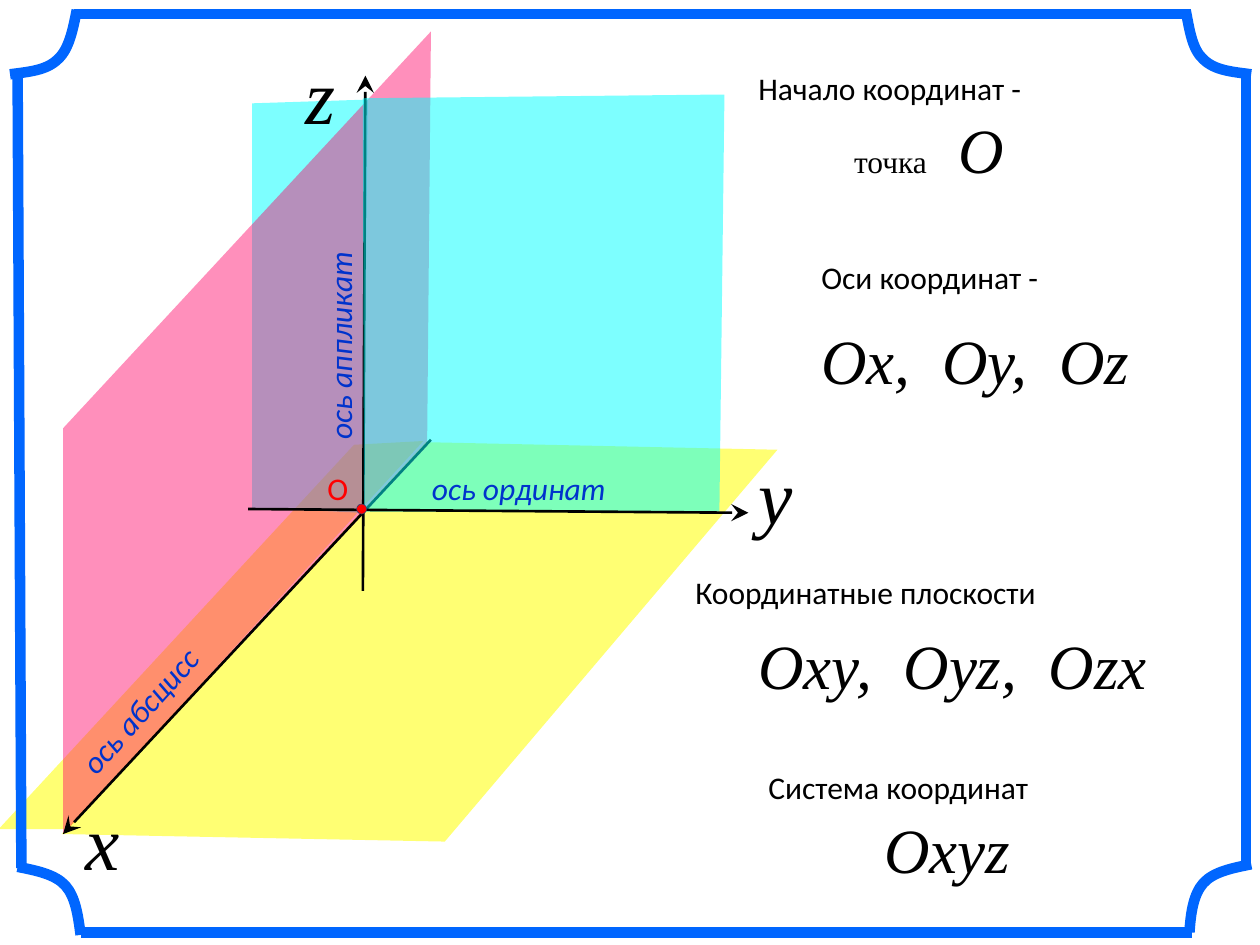
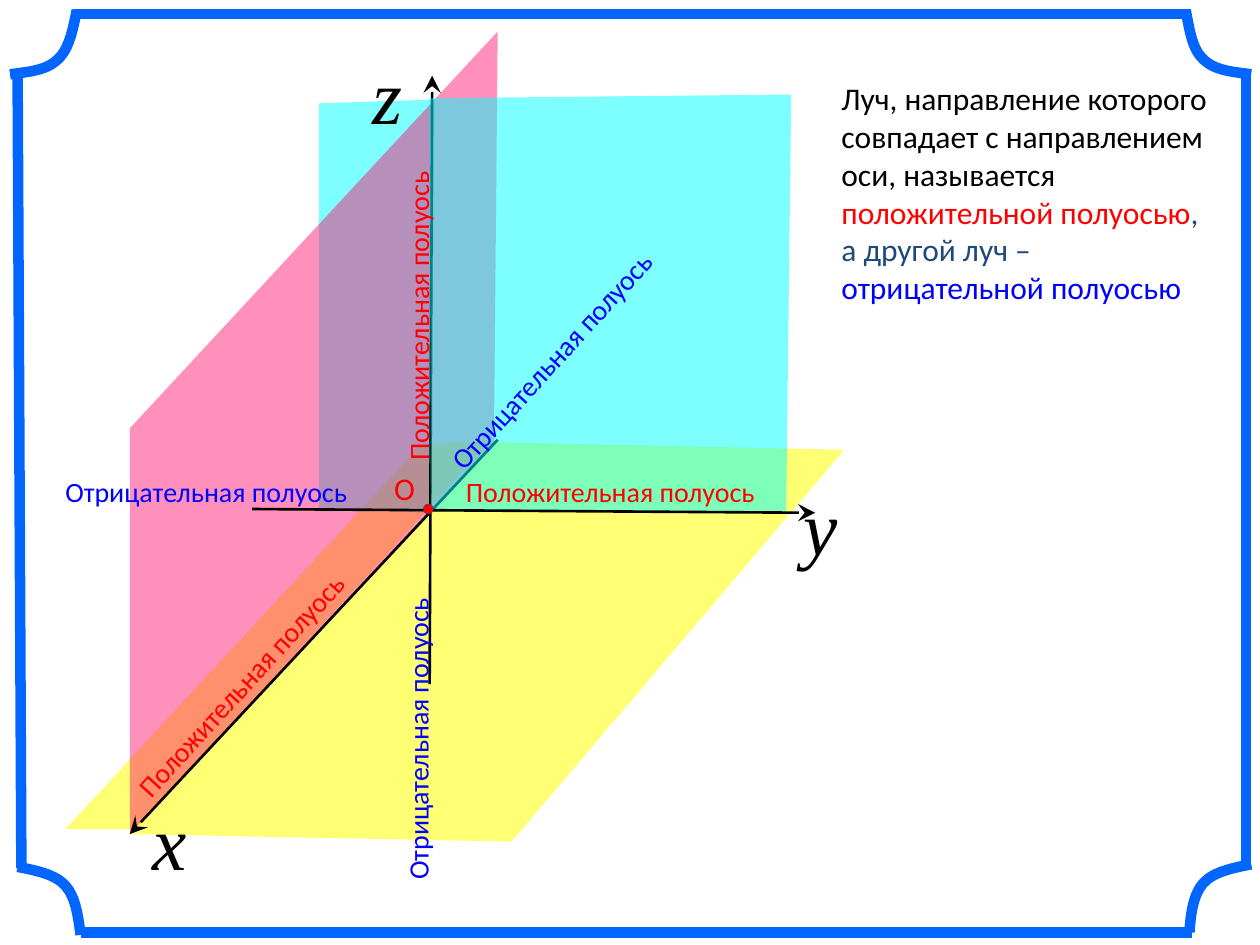
from dataclasses import dataclass

from lxml import etree
from pptx import Presentation
from pptx import util as u
from pptx.dml import color
from pptx.enum import shapes, text
from pptx.oxml import ns

COLORS = {
    "frame": "0066FF", "floor": "FFFF00", "wall": "00FFFF", "side": "FF0066",
    "ink": "000000", "axis_name": "0033CC", "positive": "FF0000",
    "negative": "0000FF", "navy": "1F497D",
}
SANS, SERIF = "Calibri", "Times New Roman"
POSITIVE, NEGATIVE = "Положительная полуось", "Отрицательная полуось"
Point = tuple[float, float]


@dataclass(frozen=True)
class Run:
    text: str
    size: int = 18
    color: str = "ink"
    font: str = SANS
    italic: bool = False
    spacing: int = 0  # hundredths of a point


@dataclass(frozen=True)
class Label:
    left: float
    top: float
    width: float
    height: float
    paragraphs: tuple[tuple[Run, ...], ...]
    rotation: float = 0
    wrap: bool = False


@dataclass(frozen=True)
class Plane:
    color: str
    opacity: int
    points: tuple[Point, ...]


@dataclass(frozen=True)
class Line:
    start: Point
    end: Point


# Coordinate planes, placed for the first slide
BACK_PLANES = (
    Plane("floor", 55, ((-0.01, 6.58), (0.54, 6.58), (3.36, 3.5), (2.81, 3.53))),
    Plane("wall", 51, ((2, 4.03), (2.88, 4.07), (2.92, 0.79), (2, 0.82))),
    Plane("floor", 55, ((0.49, 6.62), (3.53, 6.68), (6.17, 3.57), (3.38, 3.51))),
)
SIDE_PLANE = Plane("side", 44, ((0.5, 6.62), (3.39, 3.54), (3.42, 0.25), (0.5, 3.4)))
FRONT_PLANE = Plane("wall", 51, ((2.89, 4.06), (5.71, 4.06), (5.75, 0.75), (2.88, 0.78)))

# Frame: four sides and four curved corners
FRAME_SIDES = (
    Line((0.59, 0.11), (9.45, 0.11)), Line((0.64, 7.4), (9.46, 7.4)),
    Line((9.89, 0.59), (9.89, 6.89)), Line((0.14, 0.59), (0.17, 6.89)),
)
FRAME_CORNERS = (
    ((0.14, 6.88), (0.29, 6.91), (0.44, 6.94), (0.52, 7.03),
     (0.6, 7.12), (0.62, 7.27), (0.64, 7.42)),
    ((9.93, 6.86), (9.78, 6.89), (9.63, 6.92), (9.55, 7.01),
     (9.47, 7.1), (9.45, 7.25), (9.44, 7.4)),
    ((9.41, 0.08), (9.44, 0.23), (9.46, 0.39), (9.55, 0.47),
     (9.64, 0.56), (9.78, 0.57), (9.93, 0.59)),
    ((0.61, 0.08), (0.58, 0.23), (0.55, 0.39), (0.46, 0.47),
     (0.37, 0.56), (0.23, 0.57), (0.08, 0.59)),
)


def rgb(name: str) -> color.RGBColor:
    return color.RGBColor.from_string(COLORS[name])


def add_outline(slide, points: tuple[Point, ...], close: bool):
    emu = [(u.Inches(x), u.Inches(y)) for x, y in points]
    builder = slide.shapes.build_freeform(*emu[0])
    builder.add_line_segments(emu[1:], close=close)
    sp = builder.convert_to_shape()
    sp.shadow.inherit = False
    return sp


def add_plane(slide, plane: Plane, dx: float) -> None:
    sp = add_outline(slide, tuple((x + dx, y) for x, y in plane.points), True)
    sp.fill.solid()
    sp.fill.fore_color.rgb = rgb(plane.color)
    fill_color = sp.element.spPr.find(".//" + ns.qn("a:srgbClr"))
    etree.SubElement(fill_color, ns.qn("a:alpha"), val=str(plane.opacity * 1000))
    sp.line.fill.background()


def add_curve(slide, points: tuple[Point, ...]) -> None:
    """Draw cubic curves through groups of two control points and an end."""
    sp = add_outline(slide, points, False)
    sp.fill.background()
    sp.line.color.rgb = rgb("frame")
    sp.line.width = u.Pt(6)
    segments = sp.element.findall(".//" + ns.qn("a:lnTo"))
    outline = segments[0].getparent()
    for i in range(0, len(segments), 3):
        curve = etree.SubElement(outline, ns.qn("a:cubicBezTo"))
        for segment in segments[i:i + 3]:
            curve.append(segment[0])
            outline.remove(segment)


def add_line(slide, line: Line, name: str, width: float, arrow: bool = False) -> None:
    ends = [u.Inches(v) for v in (*line.start, *line.end)]
    cxn = slide.shapes.add_connector(shapes.MSO_CONNECTOR.STRAIGHT, *ends)
    cxn.line.color.rgb = rgb(name)
    cxn.line.width = u.Pt(width)
    if arrow:
        etree.SubElement(cxn.line._get_or_add_ln(), ns.qn("a:tailEnd"),
                         type="stealth", w="lg", len="lg")
    etree.SubElement(cxn.element.spPr, ns.qn("a:effectLst"))


def add_label(slide, label: Label) -> None:
    box = slide.shapes.add_textbox(*(u.Inches(v) for v in (
        label.left, label.top, label.width, label.height)))
    box.rotation = label.rotation
    tf = box.text_frame
    tf.word_wrap = label.wrap
    tf.auto_size = text.MSO_AUTO_SIZE.SHAPE_TO_FIT_TEXT
    for i, runs in enumerate(label.paragraphs):
        p = tf.paragraphs[0] if i == 0 else tf.add_paragraph()
        for item in runs:
            r = p.add_run()
            r.text = item.text
            r.font.size = u.Pt(item.size)
            r.font.name = item.font
            r.font.italic = item.italic
            r.font.color.rgb = rgb(item.color)
            if item.spacing:
                r._r.get_or_add_rPr().set("spc", str(item.spacing))


def single(left: float, top: float, width: float, height: float,
           run: Run, rotation: float = 0) -> Label:
    return Label(left, top, width, height, ((run,),), rotation)


def math_run(value: str, size: int = 36, spacing: int = 0) -> Run:
    return Run(value, size, font=SERIF, italic=True, spacing=spacing)


WIDE_SPACE = math_run(" ", spacing=900)


def spread(*names: str) -> tuple[Run, ...]:
    """List names in formula style with a double-width gap between them."""
    runs = [math_run(names[0])]
    for name in names[1:]:
        runs += [math_run(","), WIDE_SPACE, math_run(name)]
    return tuple(runs)


def add_frame(slide) -> None:
    for side in FRAME_SIDES:
        add_line(slide, side, "frame", 6)
    for corner in FRAME_CORNERS:
        add_curve(slide, corner)


def add_diagram(slide, dx: float, y_start: float, z_bottom: float, y_name: Point) -> None:
    """Draw planes, axes and origin, moved right by dx."""
    for plane in BACK_PLANES:
        add_plane(slide, plane, dx)
    add_frame(slide)
    add_plane(slide, SIDE_PLANE, dx)
    # Axes x and z lie behind the front plane, y in front of it
    add_line(slide, Line((3.42 + dx, 3.49), (0.5 + dx, 6.62)), "ink", 1.5, True)
    add_line(slide, Line((2.88 + dx, z_bottom), (2.9 + dx, 0.6)), "ink", 1.5, True)
    add_plane(slide, FRONT_PLANE, dx)
    add_line(slide, Line((y_start, 4.04), (5.94 + dx, 4.07)), "ink", 1.5, True)
    for name, left, top, width in (("x", 0.58 + dx, 6.25, 0.51),
                                   ("z", 2.33 + dx, 0.33, 0.44),
                                   ("y", *y_name, 0.47)):
        add_label(slide, single(left, top, width, 0.83, math_run(name, 44)))
    # Origin
    add_label(slide, Label(2.5 + dx, 3.67, 0.63, 0.5,
                           ((Run("О", color="positive"),),), wrap=True))
    dot = slide.shapes.add_shape(shapes.MSO_SHAPE.OVAL, u.Inches(2.83 + dx),
                                 u.Inches(4), u.Inches(0.08), u.Inches(0.08))
    dot.shadow.inherit = False
    dot.fill.solid()
    dot.fill.fore_color.rgb = rgb("positive")
    dot.line.color.rgb = rgb("navy")
    dot.line.width = u.Pt(0.25)


def build_axes_slide(slide) -> None:
    add_diagram(slide, 0, 1.97, 4.69, (5.92, 3.5))
    # Axis names
    for name, left, top, width, rotation in (
            ("ось абсцисс", 0.29, 5.12, 2.25, 312),
            ("ось аппликат", 1.48, 2.07, 2.53, 270),
            ("ось ординат", 3.33, 3.67, 2.38, 0)):
        run = Run(name, color="axis_name", italic=True)
        add_label(slide, single(left, top, width, 0.5, run, rotation))
    # Terms
    for term, left, top, width in (
            ("Начало координат -", 5.92, 0.5, 3.36),
            ("Оси координат -", 6.42, 2, 2.91),
            ("Координатные плоскости", 5.42, 4.5, 4.12),
            ("Система координат", 6, 6.05, 3.25)):
        add_label(slide, single(left, top, width, 0.5, Run(term)))
    # Notation for each term
    for runs, left, top, width in (
            ((Run("точка", font=SERIF), WIDE_SPACE, math_run("O")), 6.68, 0.83, 1.66),
            (spread("Ox", "Oy", "Oz"), 6.42, 2.5, 2.7),
            (spread("Oxy", "Oyz", "Ozx"), 5.92, 4.92, 3.37),
            (spread("Oxyz"), 6.92, 6.38, 1.23)):
        add_label(slide, Label(left, top, width, 0.7, (runs,)))


def build_half_axes_slide(slide) -> None:
    add_diagram(slide, 0.53, 2, 5.43, (6.28, 3.75))
    # Half-axis names
    for name, left, top, rotation in (
            (NEGATIVE, 0.42, 3.72, 0), (POSITIVE, 3.6, 3.72, 0),
            (POSITIVE, 0.59, 5.08, 312.5), (NEGATIVE, 3.08, 2.5, 312.4),
            (POSITIVE, 1.84, 2.09, 270), (NEGATIVE, 1.86, 5.44, 270)):
        tone, width = ("positive", 2.96) if name == POSITIVE else ("negative", 2.91)
        add_label(slide, single(left, top, width, 0.37, Run(name, 16, tone), rotation))
    # Definition
    add_label(slide, Label(6.58, 0.58, 3.33, 3.69, (
        (Run("Луч, направление которого совпадает с направлением оси, называется "),
         Run("положительной полуосью", color="positive"), Run(",", color="navy")),
        (Run("а другой луч – ", color="navy"),
         Run("отрицательной полуосью", color="negative")),
    ), wrap=True))


def main() -> None:
    prs = Presentation()
    prs.slide_width, prs.slide_height = u.Inches(10), u.Inches(7.5)
    for build in (build_axes_slide, build_half_axes_slide):
        build(prs.slides.add_slide(prs.slide_layouts[6]))
    prs.save("out.pptx")


if __name__ == "__main__":
    main()
